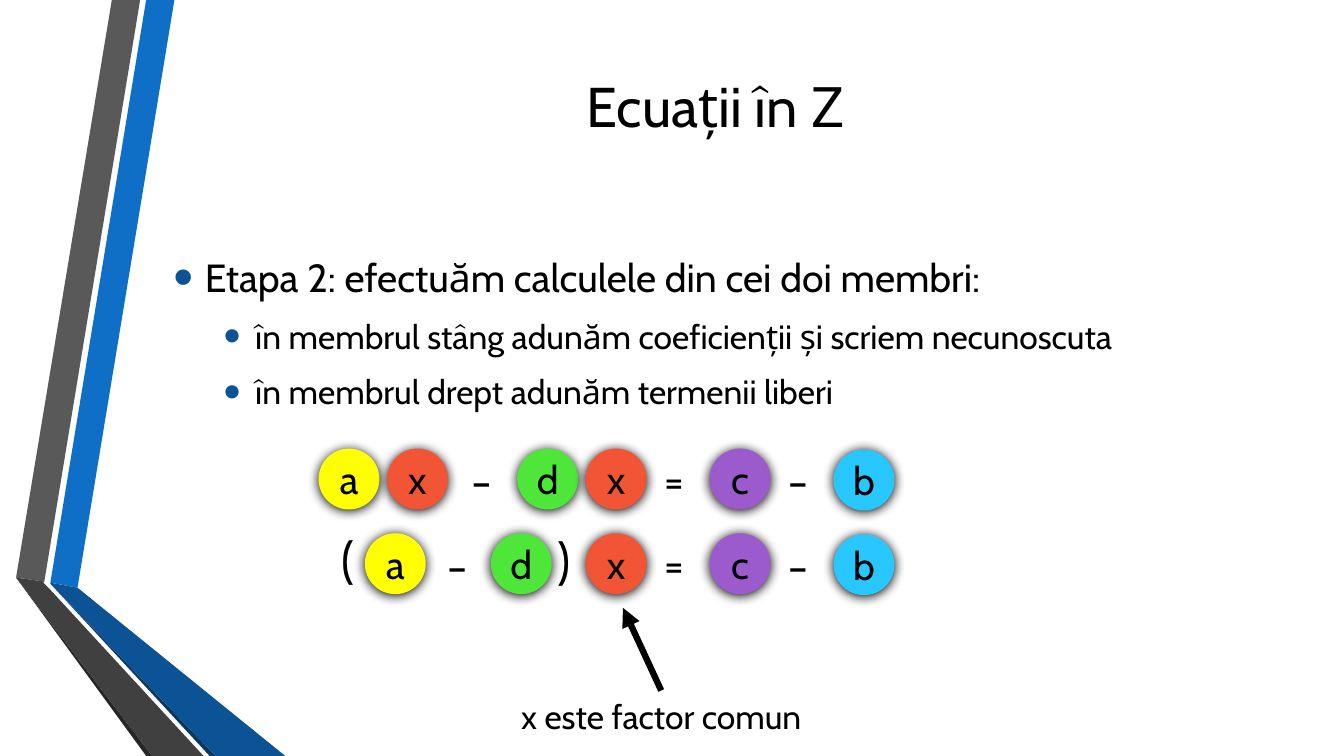
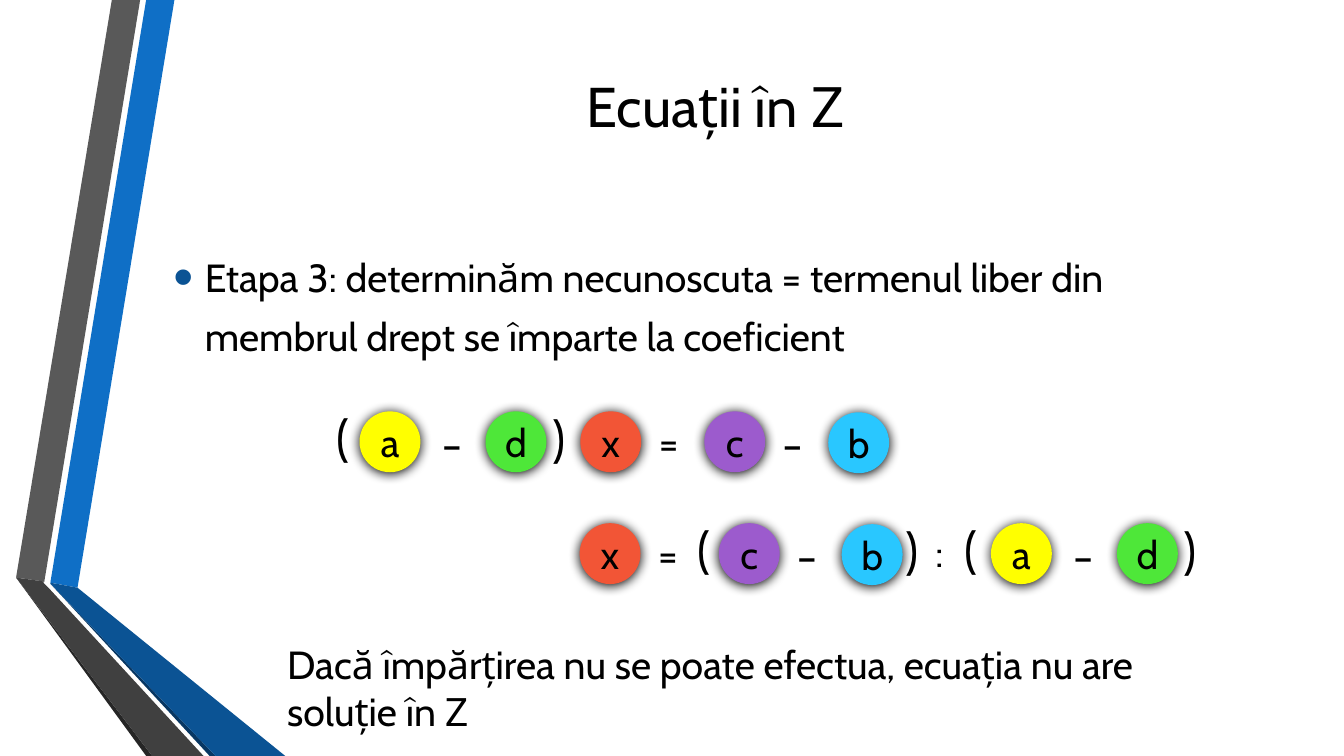
from lxml import etree
from pptx import Presentation
from pptx.dml.color import RGBColor
from pptx.enum import shapes, text
from pptx.oxml import ns
from pptx.util import Pt

BLACK, BULLET = "000000", "0B5394"
FONT, SET_FONT = "Cabin", "Roboto"
TERMS = {"a": "FFFF00", "b": "29C7FF", "c": "9C5BCD", "d": "4EE739", "x": "F25536"}
SIGNS = {
    "–": (2.9, 30.2, 41, 28),
    "=": (1.8, 35.3, 41, 28),
    ":": (0, 28.8, 41, 28),
    "(": (-7, 25.2, 50.4, 36),
    ")": (-6.5, 27.4, 50.4, 36),
}
BANDS = [
    ("0F6FC6", [(36, 416.2), (55.4, 419.8), (124.6, 0), (104.4, 0)]),
    ("595959", [(100.1, 0), (79.9, 0), (11.5, 412.6), (31.7, 415.4)]),
    ("262626", [(11.5, 412.6), (104.4, 540), (108.7, 540)]),
    ("083763", [(36, 416.9), (149.8, 540), (154.1, 540)]),
    ("0B5394", [(36, 416.9), (154.1, 540), (203.8, 540), (55.4, 419.8), (36, 416.2)]),
    ("404040", [(145.4, 540), (34.6, 419.8), (31, 416.2), (31.7, 415.4),
                (11.5, 412.6), (108.7, 540)]),
]
RIGHT_SIDE = [("x", 418.3), ("=", 467.3), ("c", 506.9), ("–", 555.8), ("b", 595.4)]
EXPANDED = [("a", 227.5), ("x", 276.5), ("–", 329.8), ("d", 369.4)] + RIGHT_SIDE
FACTORED = [("(", 236.9), ("a", 260.6), ("–", 312.5), ("d", 350.6), (")", 391)] + RIGHT_SIDE
SOLVED = [("x", 414), ("=", 463), ("(", 491), ("c", 513.4), ("–", 562.3), ("b", 601.2),
          (")", 639.4), (":", 661), ("(", 681.8), ("a", 707.8), ("–", 759.6),
          ("d", 797.8), (")", 838.1)]


def rgb(color):
    return RGBColor.from_string(color)


def sub(parent, tag, **attrs):
    el = etree.SubElement(parent, ns.qn(tag))
    for name, value in attrs.items():
        el.set(name, str(value))
    return el


class Deck:
    def __init__(self):
        self.prs = Presentation()
        self.prs.slide_width, self.prs.slide_height = Pt(960), Pt(540)
        self.layout = self.prs.slide_layouts[1]
        self.s = None

    def run(self, p, words, size, font=FONT):
        r = p.add_run()
        r.text = words
        r.font.name, r.font.size = font, Pt(size)
        r.font.color.rgb = rgb(BLACK)

    def place(self, sp, left, top, width, height):
        sp.left, sp.top, sp.width, sp.height = Pt(left), Pt(top), Pt(width), Pt(height)

    def paint(self, sp, color):
        sp.fill.solid()
        sp.fill.fore_color.rgb = rgb(color)
        sp.line.fill.background()
        sp.shadow.inherit = False

    def bands(self):
        tree = self.layout.shapes.element
        for i, (color, points) in enumerate(BANDS):
            points = [(Pt(x), Pt(y)) for x, y in points]
            builder = self.s.shapes.build_freeform(*points[0])
            builder.add_line_segments(points[1:], close=True)
            sp = builder.convert_to_shape()
            self.paint(sp, color)
            sp.element.nvSpPr.cNvPr.set("id", str(100 + i))
            tree.insert(2 + i, sp.element)

    def slide(self, items):
        self.s = self.prs.slides.add_slide(self.layout)
        title, body = self.s.placeholders
        self.place(title, 116.6, 23.8, 789.1, 102.2)
        tf = title.text_frame
        tf.vertical_anchor = text.MSO_ANCHOR.MIDDLE
        p = tf.paragraphs[0]
        p.alignment = text.PP_ALIGN.CENTER
        self.run(p, "Ecuații în ", 40)
        self.run(p, "Z", 40, SET_FONT)
        self.place(body, 116.6, 169.2, 789.1, 328.3)
        tf = body.text_frame
        tf.auto_size = text.MSO_AUTO_SIZE.NONE
        for i, (level, words) in enumerate(items):
            p = tf.add_paragraph() if i else tf.paragraphs[0]
            self.bullet(p, level, words)

    def bullet(self, p, level, words):
        p.level = level
        p.line_spacing = 1 if level else 1.25
        p.space_before, p.space_after = Pt(4.8 if level else 6), Pt(6)
        pPr = p._p.get_or_add_pPr()
        pPr.set("marL", str(Pt(22.5 + 36 * level)))
        pPr.set("indent", str(-Pt(22.5)))
        sub(sub(pPr, "a:buClr"), "a:srgbClr", val=BULLET)
        sub(pPr, "a:buSzPct", val=145000)
        sub(pPr, "a:buFont", typeface="Arial")
        sub(pPr, "a:buChar", char="•")
        self.run(p, words, 24 if level else 28)

    def label(self, box, runs, size, align=text.PP_ALIGN.LEFT):
        sp = self.s.shapes.add_textbox(*map(Pt, box))
        tf = sp.text_frame
        tf.word_wrap = True
        p = tf.paragraphs[0]
        p.alignment = align
        for words, font in runs:
            self.run(p, words, size, font)
        return sp

    def term(self, name, left, top):
        sp = self.s.shapes.add_shape(shapes.MSO_SHAPE.OVAL, Pt(left), Pt(top), Pt(43.5), Pt(43.5))
        self.paint(sp, TERMS[name])
        effects = sp.element.spPr.find(ns.qn("a:effectLst"))
        shadow = sub(effects, "a:outerShdw", blurRad=Pt(8.5), dist=Pt(1), dir=5400000,
                     algn="ctr", rotWithShape=0)
        sub(shadow, "a:srgbClr", val=BLACK)
        tf = sp.text_frame
        tf.vertical_anchor = text.MSO_ANCHOR.MIDDLE
        p = tf.paragraphs[0]
        p.alignment = text.PP_ALIGN.CENTER
        self.run(p, name, 28)

    def equation(self, top, parts, shift=0):
        for symbol, left in parts:
            if symbol in TERMS:
                self.term(symbol, left + shift, top + (0.7 if symbol == "b" else 0))
            else:
                drop, width, height, size = SIGNS[symbol]
                self.label((left + shift, top + drop, width, height), [(symbol, FONT)], size)

    def arrow(self, source, x, y):
        c = self.s.shapes.add_connector(shapes.MSO_CONNECTOR.STRAIGHT, 0, 0, Pt(x), Pt(y))
        c.begin_connect(source, 0)
        c.line.color.rgb = rgb(BLACK)
        c.line.width = Pt(4.5)
        sub(c.line._get_or_add_ln(), "a:tailEnd", type="triangle")
        sub(c.element.spPr, "a:effectLst")


def main():
    d = Deck()
    d.slide([
        (0, "Etapa 2: efectuăm calculele din cei doi membri:"),
        (1, "în membrul stâng adunăm coeficienții și scriem necunoscuta"),
        (1, "în membrul drept adunăm termenii liberi"),
    ])
    d.bands()
    d.equation(320.4, EXPANDED)
    d.equation(380.9, FACTORED)
    note = d.label((353.5, 493.2, 237.6, 36), [("x este factor comun", FONT)], 24,
                   text.PP_ALIGN.CENTER)
    d.arrow(note, 445, 434.2)

    d.slide([(0, "Etapa 3: determinăm necunoscuta = termenul liber din membrul drept "
                 "se împarte la coeficient")])
    d.equation(293.8, FACTORED, -3.8)
    d.equation(373.7, SOLVED)
    d.label((198, 453.6, 672.5, 74.9),
            [("Dacă împărțirea nu se poate efectua, ecuația nu are soluție în ", FONT),
             ("Z", SET_FONT)], 28)
    d.prs.save("out.pptx")


if __name__ == "__main__":
    main()
